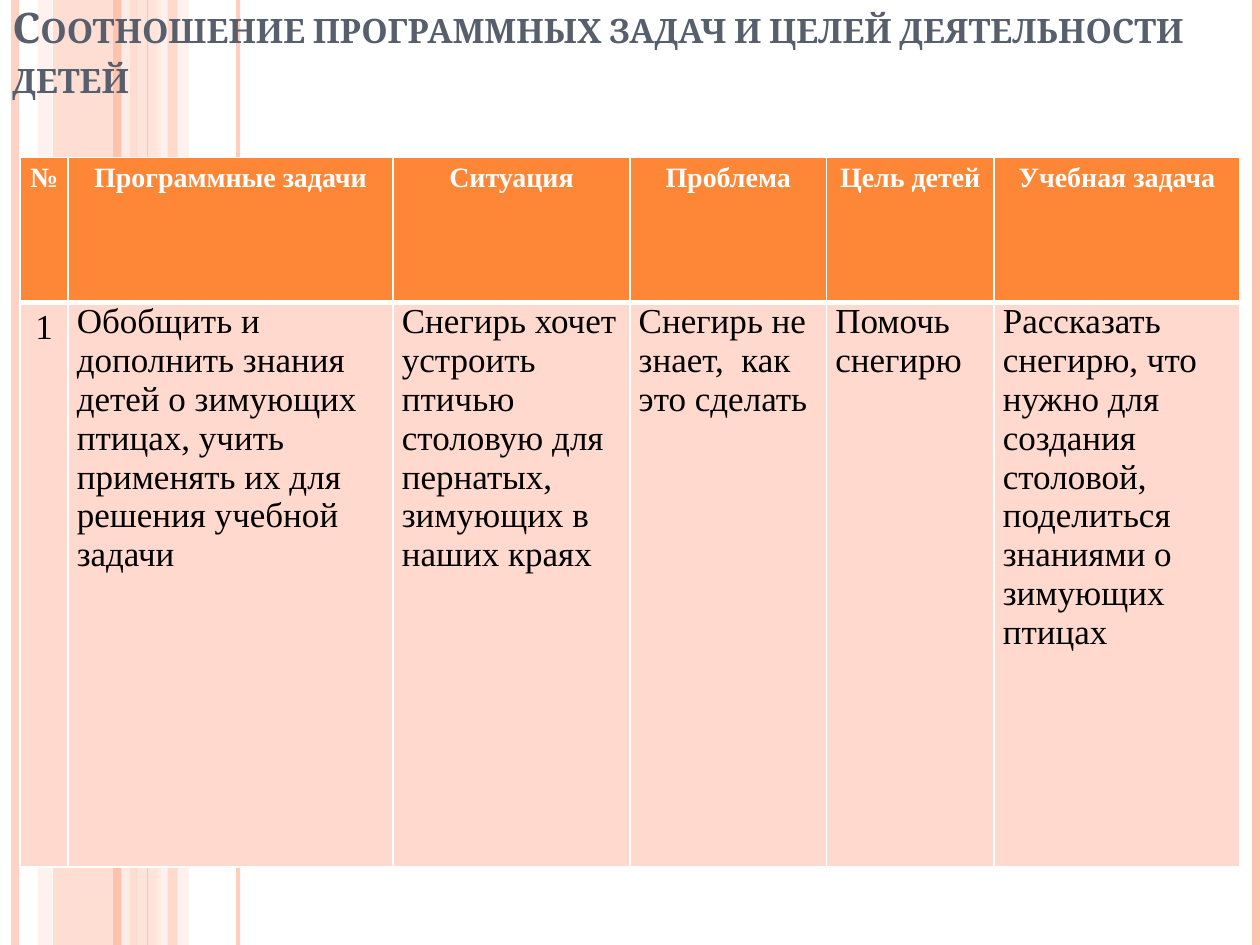
from dataclasses import dataclass

import pptx
import pptx.dml.color
import pptx.enum.shapes
import pptx.enum.text
import pptx.oxml.ns
import pptx.util
from lxml import etree

Inches = pptx.util.Inches
Pt = pptx.util.Pt
qn = pptx.oxml.ns.qn
ALIGN = pptx.enum.text.PP_ALIGN
HEIGHT = 7.5


@dataclass(frozen=True)
class Theme:
    white: str = "FFFFFF"
    black: str = "000000"
    orange: str = "FE8637"
    salmon: str = "FEC3AE"
    peach: str = "FFD9CE"
    blush: str = "FFEDE8"
    slate: str = "575F6D"
    title_font: str = "Cambria"
    table_font: str = "Times New Roman"
    title_size: int = 24
    header_size: int = 16
    body_size: int = 20
    thin_rule: int = 1
    thick_rule: int = 3


THEME = Theme()

# left, width, colour, opacity in percent
BANDS = [
    (0.42, 0.67, THEME.salmon, 54),
    (0.3, 0.11, THEME.peach, 36),
    (1.08, 0.2, THEME.peach, 70),
    (1.25, 0.25, THEME.blush, 71),
]
TOP_BAND = (1.33, 0.08, THEME.salmon, 51)

# x, colour, line width in points, opacity in percent
STRIPES = [
    (0.12, THEME.salmon, 4.5, 73),
    (1, THEME.blush, 4.5, 83),
    (0.93, THEME.salmon, 4.5, 100),
    (1.89, THEME.salmon, 2.25, 82),
    (1.17, THEME.salmon, 0.75, 100),
    (9.97, THEME.salmon, 4.5, 100),
]

TITLE = "Соотношение программных задач и целей деятельности детей"
COLUMN_WIDTHS = [0.38, 2.58, 1.88, 1.56, 1.33, 1.95]
ROW_HEIGHTS = [1.15, 4.48]
HEADINGS = ["№", "Программные задачи", "Ситуация", "Проблема", "Цель детей", "Учебная задача"]
LESSON = [
    "1",
    "Обобщить и дополнить знания детей о зимующих птицах, учить применять их для решения учебной задачи",
    "Снегирь хочет устроить птичью столовую для пернатых, зимующих в наших краях",
    "Снегирь не знает,  как это сделать",
    "Помочь снегирю",
    "Рассказать снегирю, что нужно для создания столовой, поделиться знаниями о зимующих птицах",
]


def rgb(colour):
    return pptx.dml.color.RGBColor.from_string(colour)


def set_all(target, formats):
    for name, value in formats.items():
        setattr(target, name, value)


def set_opacity(element, percent):
    """Apply the opacity to the one colour the element holds."""
    if percent < 100:
        colour = next(element.iter(qn("a:srgbClr")))
        etree.SubElement(colour, qn("a:alpha"), val=str(percent * 1000))


def add_band(slide, left, width, colour, opacity):
    band = slide.shapes.add_shape(
        pptx.enum.shapes.MSO_SHAPE.RECTANGLE, Inches(left), 0, Inches(width), Inches(HEIGHT))
    band.shadow.inherit = False
    band.line.fill.background()
    band.fill.solid()
    band.fill.fore_color.rgb = rgb(colour)
    set_opacity(band.fill._xPr, opacity)


def add_stripe(slide, x, colour, width, opacity):
    stripe = slide.shapes.add_connector(
        pptx.enum.shapes.MSO_CONNECTOR.STRAIGHT, Inches(x), 0, Inches(x), Inches(HEIGHT))
    stripe.line.width = Pt(width)
    stripe.line.color.rgb = rgb(colour)
    properties = stripe._element.spPr
    set_opacity(properties, opacity)
    etree.SubElement(properties, qn("a:effectLst"))


def write(paragraph, text, font, size, colour, bold):
    run = paragraph.add_run()
    run.text = text
    set_all(run.font, {"name": font, "size": Pt(size), "bold": bold})
    run.font.color.rgb = rgb(colour)
    return run


def add_title(slide):
    title = slide.shapes.add_textbox(0, 0, Inches(10), Inches(0.86))
    set_all(title.text_frame, {
        "word_wrap": True,
        "vertical_anchor": pptx.enum.text.MSO_ANCHOR.BOTTOM,
    })
    run = write(title.text_frame.paragraphs[0], TITLE,
                THEME.title_font, THEME.title_size, THEME.slate, True)
    run.font._element.set("cap", "small")


def set_borders(cell, widths):
    """Draw white rules; widths maps the sides L, R, T, B to points, in that order."""
    properties = cell._tc.get_or_add_tcPr()
    for position, (side, width) in enumerate(widths.items()):
        rule = etree.Element(qn(f"a:ln{side}"), w=str(Pt(width)))
        fill = etree.SubElement(rule, qn("a:solidFill"))
        etree.SubElement(fill, qn("a:srgbClr"), val=THEME.white)
        properties.insert(position, rule)


def fill_cell(cell, text, is_header, centred):
    set_all(cell, {
        "margin_left": Inches(0.07), "margin_right": Inches(0.07),
        "margin_top": 0, "margin_bottom": 0,
    })
    cell.fill.solid()
    cell.fill.fore_color.rgb = rgb(THEME.orange if is_header else THEME.peach)
    paragraph = cell.text_frame.paragraphs[0]
    if centred:
        set_all(paragraph, {"alignment": ALIGN.CENTER, "line_spacing": 1.15})
    size, colour = ((THEME.header_size, THEME.white) if is_header
                    else (THEME.body_size, THEME.black))
    write(paragraph, text, THEME.table_font, size, colour, is_header)
    thin, thick = THEME.thin_rule, THEME.thick_rule
    set_borders(cell, {
        "L": thin, "R": thin,
        "T": thin if is_header else thick,
        "B": thick if is_header else thin,
    })


def add_task_table(slide):
    rows = [HEADINGS, LESSON]
    tasks = slide.shapes.add_table(
        len(rows), len(HEADINGS), Inches(0.16), Inches(1.25),
        Inches(sum(COLUMN_WIDTHS)), Inches(sum(ROW_HEIGHTS))).table
    for column, width in zip(tasks.columns, COLUMN_WIDTHS):
        column.width = Inches(width)
    for row, height in zip(tasks.rows, ROW_HEIGHTS):
        row.height = Inches(height)
    for row_index, texts in enumerate(rows):
        for column_index, text in enumerate(texts):
            is_header = row_index == 0
            fill_cell(tasks.cell(row_index, column_index), text,
                      is_header, is_header or column_index == 0)


def main():
    deck = pptx.Presentation()
    set_all(deck, {"slide_width": Inches(10), "slide_height": Inches(HEIGHT)})
    slide = deck.slides.add_slide(deck.slide_layouts[6])
    for band in BANDS:
        add_band(slide, *band)
    for stripe in STRIPES:
        add_stripe(slide, *stripe)
    add_band(slide, *TOP_BAND)
    add_title(slide)
    add_task_table(slide)
    deck.save("out.pptx")


if __name__ == "__main__":
    main()
